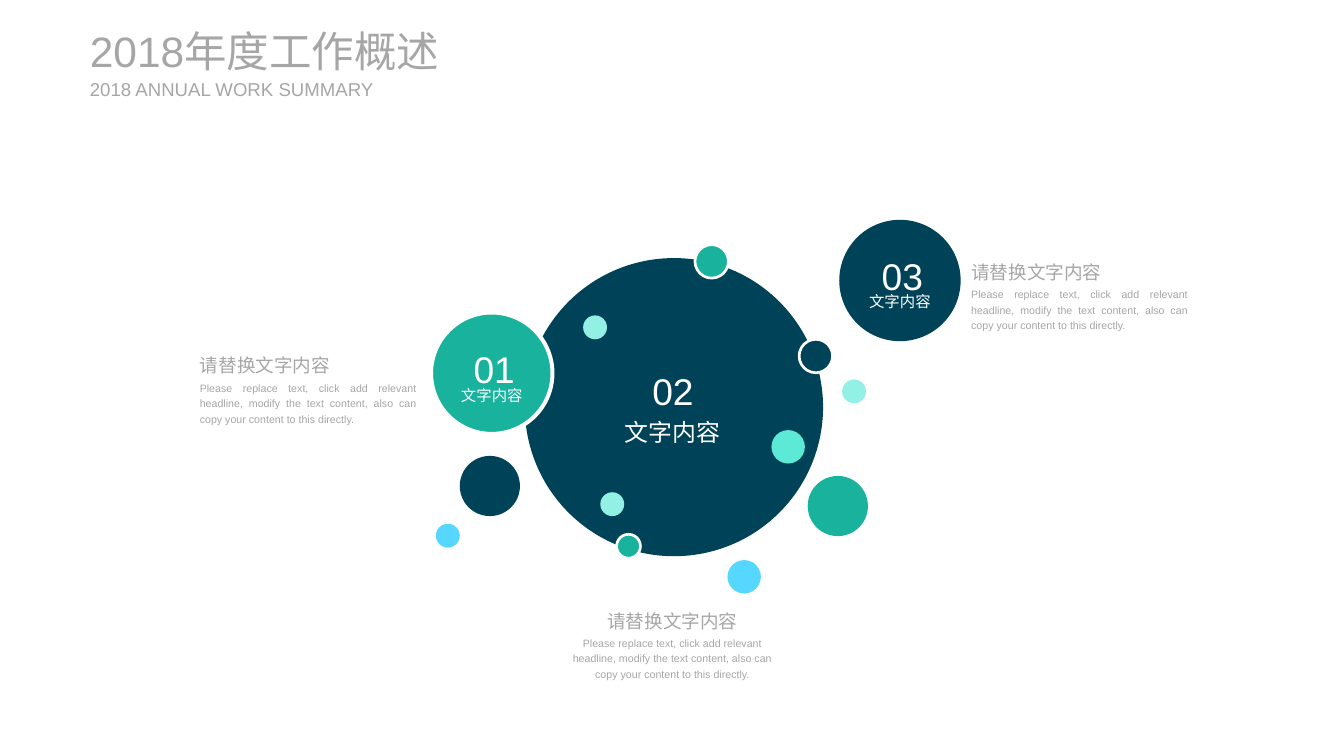
"""Build the 2018 annual work summary slide with its cluster of circles."""
import pptx
import pptx.util
import pptx.dml.color
import pptx.enum.shapes
import pptx.enum.text

Inches = pptx.util.Inches
Pt = pptx.util.Pt
ALIGN = pptx.enum.text.PP_ALIGN
ANCHOR = pptx.enum.text.MSO_ANCHOR

COLORS = {"navy": "004358", "teal": "18B29D", "mint": "92F0E4", "aqua": "5CE9D6",
          "sky": "56D7FF", "white": "FFFFFF", "grey": "A6A6A6"}

TITLE = "2018年度工作概述"
SUBTITLE = "2018 ANNUAL WORK SUMMARY"
LABEL = "文字内容"
HEADING = "请替换文字内容"
DETAIL = ("Please replace text, click add relevant headline, modify the text content, "
          "also can copy your content to this directly.")

# left, top, diameter, fill, white outline in points
CIRCLES = [
    (5.49, 2.70, 3.12, "navy", 0),
    (7.27, 2.56, 0.35, "teal", 2),
    (6.45, 5.59, 0.25, "teal", 2),
    (8.81, 3.97, 0.25, "mint", 0),
    (7.61, 5.86, 0.35, "sky", 0),
    (6.10, 3.30, 0.25, "mint", 0),
    (4.51, 3.27, 1.27, "teal", 3),
    (8.07, 4.50, 0.35, "aqua", 0),
    (4.81, 4.77, 0.63, "navy", 0),
    (8.78, 2.30, 1.27, "navy", 0),
    (8.36, 3.55, 0.35, "navy", 2),
    (4.56, 5.48, 0.25, "sky", 0),
    (6.28, 5.15, 0.25, "mint", 0),
    (8.45, 4.98, 0.63, "teal", 0),
]

# number, number left and top, label left, top, height and size
BADGES = [
    ("01", 4.84, 3.53, 4.59, 4.01, 0.21, 11.6),
    ("02", 6.71, 3.76, 6.48, 4.33, 0.33, 18),
    ("03", 9.11, 2.56, 8.86, 3.03, 0.21, 11.6),
]

# left and top of the caption, alignment
CAPTIONS = [
    (2.09, 3.66, ALIGN.JUSTIFY),
    (5.90, 6.33, ALIGN.CENTER),
    (10.16, 2.68, ALIGN.JUSTIFY),
]
DETAIL_WIDTH, HEADING_WIDTH, DETAIL_DROP = 2.27, 1.72, 0.31

FRAME = {"margin_left": 0, "margin_top": 0, "margin_right": 0, "margin_bottom": 0,
         "word_wrap": True, "auto_size": pptx.enum.text.MSO_AUTO_SIZE.NONE}


def rgb(name):
    return pptx.dml.color.RGBColor.from_string(COLORS[name])


def apply(target, values):
    for name, value in values.items():
        setattr(target, name, value)


def write(holder, text, box, size, color="grey", anchor=ANCHOR.TOP, **paragraph_format):
    left, top, width, height = map(Inches, box)
    apply(holder, {"left": left, "top": top, "width": width, "height": height})
    frame = holder.text_frame
    apply(frame, {**FRAME, "vertical_anchor": anchor})
    paragraph = frame.paragraphs[0]
    apply(paragraph, paragraph_format)
    run = paragraph.add_run()
    run.text = text
    apply(run.font, {"size": Pt(size), "name": "Arial"})
    run.font.color.rgb = rgb(color)


def add_text(slide, *content, **formats):
    write(slide.shapes.add_textbox(0, 0, 0, 0), *content, **formats)


def add_circle(slide, left, top, diameter, fill, outline):
    circle = slide.shapes.add_shape(
        pptx.enum.shapes.MSO_SHAPE.OVAL,
        Inches(left), Inches(top), Inches(diameter), Inches(diameter))
    circle.shadow.inherit = False
    circle.fill.solid()
    circle.fill.fore_color.rgb = rgb(fill)
    if outline:
        circle.line.color.rgb = rgb("white")
        circle.line.width = Pt(outline)
    else:
        circle.line.fill.background()


def main():
    deck = pptx.Presentation()
    apply(deck, {"slide_width": Inches(14.06), "slide_height": Inches(7.91)})
    slide = deck.slides.add_slide(deck.slide_layouts.get_by_name("Title Only"))

    heading_style = {"anchor": ANCHOR.MIDDLE, "alignment": ALIGN.LEFT}
    write(slide.shapes.title, TITLE, (0.94, 0.26, 4.32, 0.54), 32, **heading_style)
    add_text(slide, SUBTITLE, (0.94, 0.81, 3.07, 0.24), 14, **heading_style)

    for circle in CIRCLES:
        add_circle(slide, *circle)

    badge_style = {"color": "white", "alignment": ALIGN.CENTER, "line_spacing": 1.2}
    for number, left, top, label_left, label_top, height, size in BADGES:
        add_text(slide, LABEL, (label_left, label_top, 1.11, height), size,
                 anchor=ANCHOR.MIDDLE, **badge_style)
        add_text(slide, number, (left, top, 0.66, 0.51), 28, **badge_style)

    for left, top, alignment in CAPTIONS:
        centered = alignment == ALIGN.CENTER
        heading_left = left + (DETAIL_WIDTH - HEADING_WIDTH) / 2 * centered
        add_text(slide, HEADING, (heading_left, top, HEADING_WIDTH, 0.28), 14,
                 alignment=alignment, line_spacing=1.2)
        add_text(slide, DETAIL, (left, top + DETAIL_DROP, DETAIL_WIDTH, 0.47), 8,
                 alignment=alignment, line_spacing=1.2,
                 space_before=Pt(1.6), space_after=Pt(6))

    deck.save("out.pptx")


if __name__ == "__main__":
    main()
